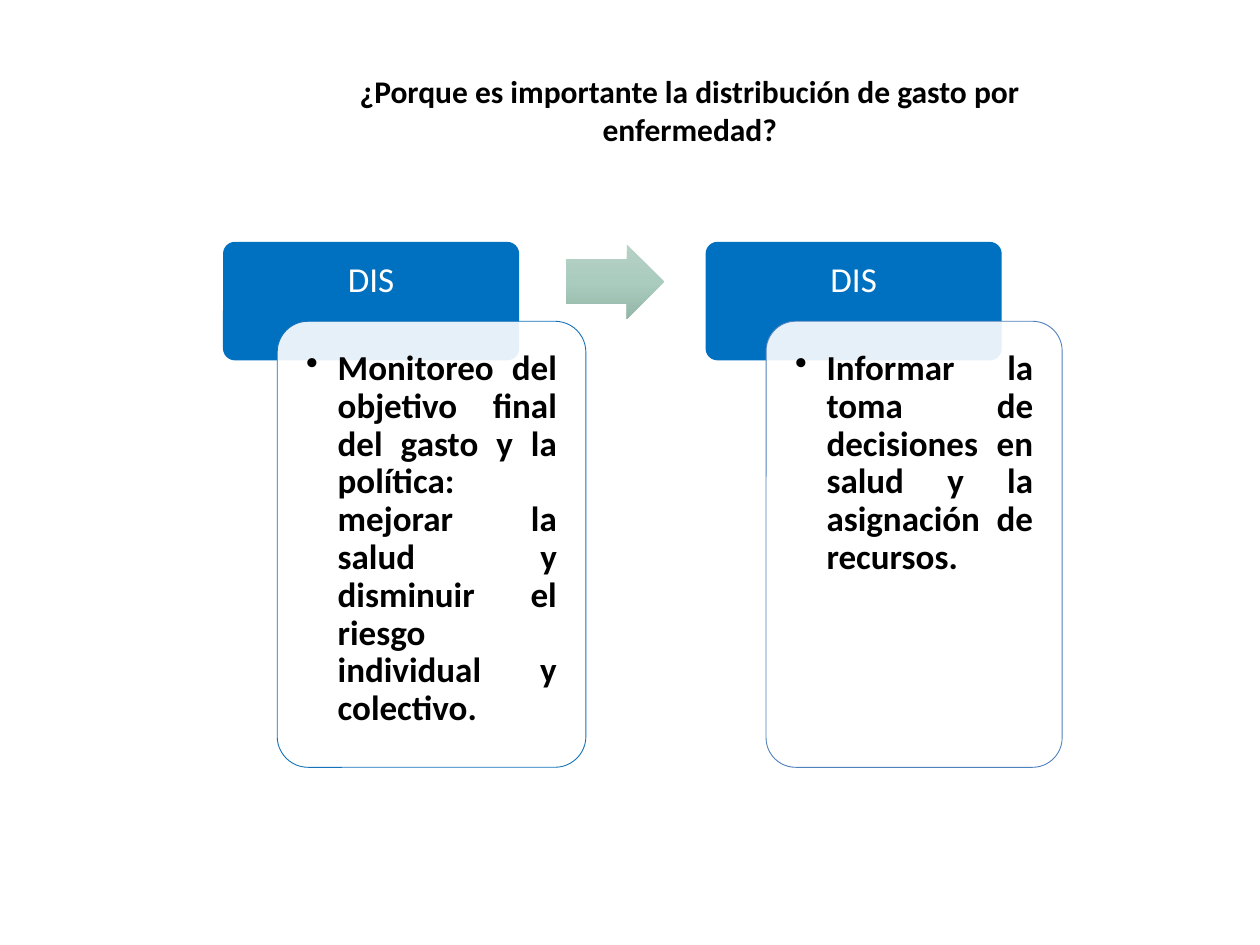
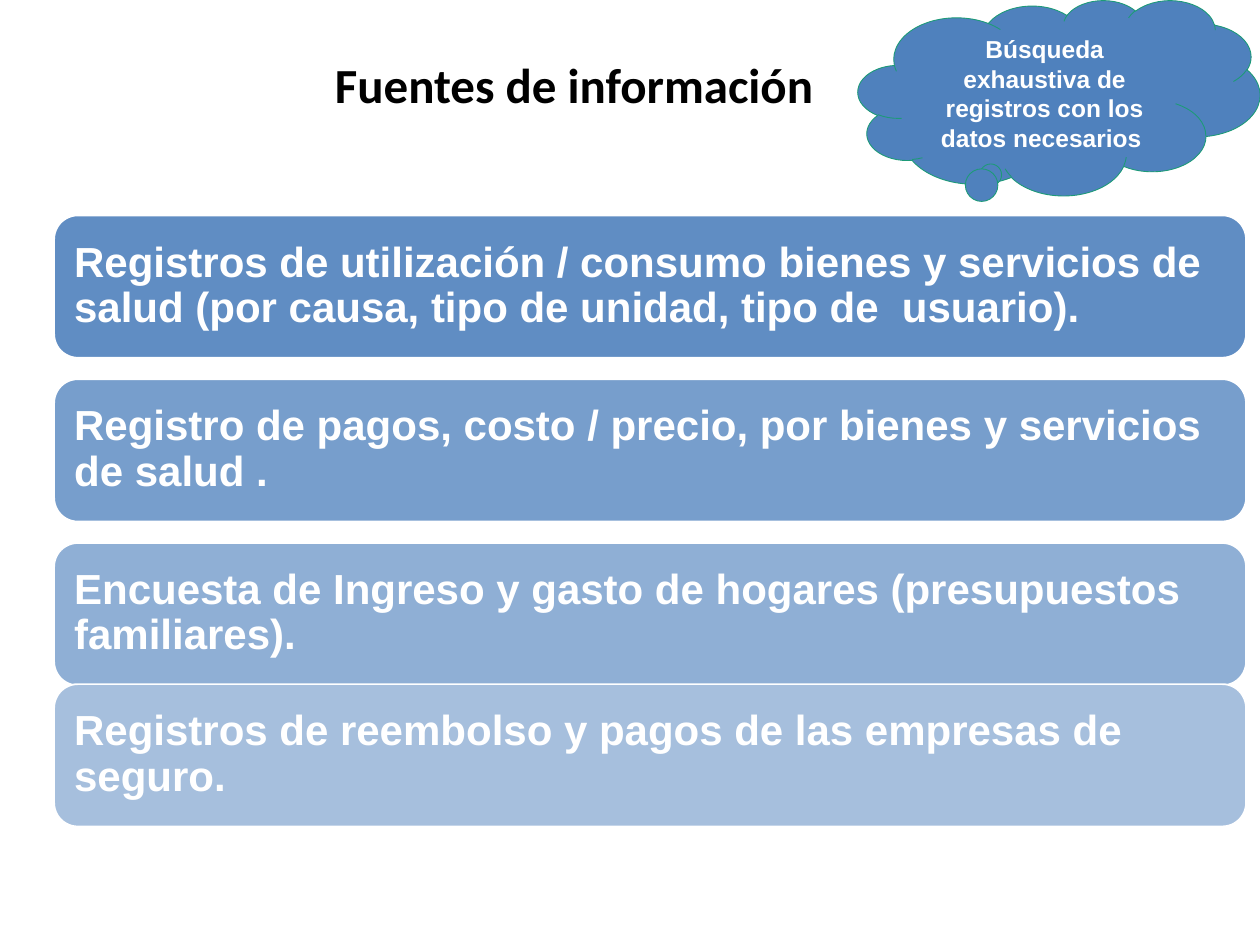
import copy

import pptx
import pptx.dml.color
import pptx.enum.shapes
import pptx.enum.text
import pptx.oxml
import pptx.oxml.ns
import pptx.util
from pptx.util import Inches

SHAPES = pptx.enum.shapes.MSO_SHAPE
ALIGN = pptx.enum.text.PP_ALIGN
ANCHOR = pptx.enum.text.MSO_ANCHOR

WHITE = "FFFFFF"
BLACK = "000000"
STRONG_BLUE = "0070C0"
SOFT_BLUE = "4F81BD"
CARD_EDGE = "1472BA"
CLOUD_EDGE = "1D9A78"
ARROW_GREENS = ((0, "B6D1C6"), (0.5, "AACCBE"), (1, "95B7A9"))

HEADING_FONT = "Calibri"
BODY_FONT = "Arial"


def color(value):
    return pptx.dml.color.RGBColor.from_string(value)


class Deck:
    """Holds the presentation, its style and the current slide."""

    def __init__(self):
        self.presentation = pptx.Presentation()
        self.presentation.slide_width = Inches(10)
        self.presentation.slide_height = Inches(7.5)
        self.slide = None

    def new_slide(self):
        layout = self.presentation.slide_layouts[6]
        self.slide = self.presentation.slides.add_slide(layout)

    def shape(self, kind, box, fill=None, opacity=100, line=None,
              line_width=0.5, adjustments=()):
        shape = self.slide.shapes.add_shape(kind, *map(Inches, box))
        shape.shadow.inherit = False
        for index, value in enumerate(adjustments):
            shape.adjustments[index] = value
        if fill:
            shape.fill.solid()
            shape.fill.fore_color.rgb = color(fill)
        if opacity < 100:
            fill_color = shape._element.spPr.find(
                pptx.oxml.ns.qn("a:solidFill"))[0]
            alpha = pptx.oxml.xmlchemy.OxmlElement("a:alpha")
            alpha.set("val", str(opacity * 1000))
            fill_color.append(alpha)
        if line:
            shape.line.color.rgb = color(line)
            shape.line.width = pptx.util.Pt(line_width)
        else:
            shape.line.fill.background()
        return shape

    def gradient_arrow(self, box, stops, adjustments):
        arrow = self.shape(SHAPES.RIGHT_ARROW, box, adjustments=adjustments)
        arrow.fill.gradient()
        arrow.fill.gradient_angle = 270
        # A new gradient has two stops; add one
        stop_list = next(arrow._element.spPr.iter(pptx.oxml.ns.qn("a:gsLst")))
        stop_list.append(copy.deepcopy(stop_list[0]))
        for stop, (position, value) in zip(arrow.fill.gradient_stops, stops):
            stop.position = position
            stop.color.rgb = color(value)

    def set_text(self, shape, text, size, font, text_color, bold=True,
                 align=ALIGN.LEFT, anchor=ANCHOR.TOP, spacing=None,
                 insets=(0.1, 0.05, 0.1, 0.05), bullet=False):
        frame = shape.text_frame
        frame.word_wrap = True
        frame.vertical_anchor = anchor
        (frame.margin_left, frame.margin_top,
         frame.margin_right, frame.margin_bottom) = map(Inches, insets)
        frame.text = text
        paragraph = frame.paragraphs[0]
        paragraph.alignment = align
        if spacing:
            paragraph.line_spacing = spacing
        if bullet:
            properties = paragraph._p.get_or_add_pPr()
            properties.set("marL", str(Inches(0.25)))
            properties.set("indent", str(-Inches(0.25)))
            mark = pptx.oxml.xmlchemy.OxmlElement("a:buChar")
            mark.set("char", "•")
            properties.append(mark)
        for run in paragraph.runs:
            run.font.size = pptx.util.Pt(size)
            run.font.name = font
            run.font.bold = bold
            run.font.color.rgb = color(text_color)

    def text(self, box, text, size, font, text_color, **options):
        text_box = self.slide.shapes.add_textbox(*map(Inches, box))
        self.set_text(text_box, text, size, font, text_color, **options)

    def title(self, box, text, size, **options):
        self.text(box, text, size, HEADING_FONT, BLACK, **options)

    def header_card(self, left, card_left, card_width, edge, header, body):
        """Blue header with a translucent card overlapping it."""
        self.shape(SHAPES.ROUNDED_RECTANGLE, (left, 1.92, 2.35, 0.94),
                   STRONG_BLUE, adjustments=[0.1])
        self.text((left, 1.92, 2.35, 0.63), header, 20, HEADING_FONT, WHITE,
                  bold=False, align=ALIGN.CENTER, spacing=0.9,
                  insets=(0.16, 0.16, 0.16, 0.08))
        self.shape(SHAPES.ROUNDED_RECTANGLE, (card_left, 2.55, card_width, 3.54),
                   WHITE, 90, edge, adjustments=[0.1])
        self.text((card_left + 0.07, 2.62, card_width - 0.14, 3.4), body, 20,
                  HEADING_FONT, BLACK, align=ALIGN.JUSTIFY, spacing=0.9,
                  insets=[0.16] * 4, bullet=True)

    def bar(self, top, opacity, text):
        self.shape(SHAPES.ROUNDED_RECTANGLE, (0.43, top, 9.46, 1.13),
                   SOFT_BLUE, opacity, WHITE, 1)
        self.text((0.49, top + 0.05, 9.35, 1.02), text, 24, BODY_FONT, WHITE,
                  anchor=ANCHOR.MIDDLE, spacing=0.9, insets=[0.1] * 4)


def add_importance_slide(deck):
    deck.new_slide()
    deck.title((2.64, 0.52, 5.67, 0.71),
               "¿Porque es importante la distribución de gasto por enfermedad?",
               18, align=ALIGN.CENTER)
    deck.header_card(1.77, 2.2, 2.45, CARD_EDGE, "DIS",
                     "Monitoreo del objetivo final del gasto y la política: "
                     "mejorar la salud y disminuir el riesgo individual y "
                     "colectivo.")
    deck.gradient_arrow((4.49, 1.94, 0.78, 0.59), ARROW_GREENS, (0.6, 0.5))
    deck.header_card(5.6, 6.08, 2.35, SOFT_BLUE, "DIS",
                     "Informar la toma de decisiones en salud y la asignación "
                     "de recursos.")


def add_sources_slide(deck):
    deck.new_slide()
    deck.title((2.56, 0.44, 6.51, 0.67), "Fuentes de información", 28,
               spacing=0.9)

    # Bars fade from top to bottom
    sources = (
        (1.71, 90, "Registros de utilización / consumo bienes y servicios de "
                   "salud (por causa, tipo de unidad, tipo de  usuario)."),
        (3.01, 77, "Registro de pagos, costo / precio, por bienes y servicios "
                   "de salud ."),
        (4.31, 63, "Encuesta de Ingreso y gasto de hogares (presupuestos "
                   "familiares)."),
        (5.43, 50, "Registros de reembolso y pagos de las empresas de seguro."),
    )
    for top, opacity, text in sources:
        deck.bar(top, opacity, text)

    # Thought cloud in the corner
    cloud = deck.shape(SHAPES.CLOUD_CALLOUT, (6.81, 0, 3.19, 1.55), SOFT_BLUE,
                       line=CLOUD_EDGE, adjustments=(-0.165, 0.384))
    deck.set_text(cloud,
                  "Búsqueda exhaustiva de registros con los datos necesarios ",
                  14, BODY_FONT, WHITE, align=ALIGN.CENTER,
                  anchor=ANCHOR.MIDDLE)


def main():
    deck = Deck()
    add_importance_slide(deck)
    add_sources_slide(deck)
    deck.presentation.save("out.pptx")


if __name__ == "__main__":
    main()
